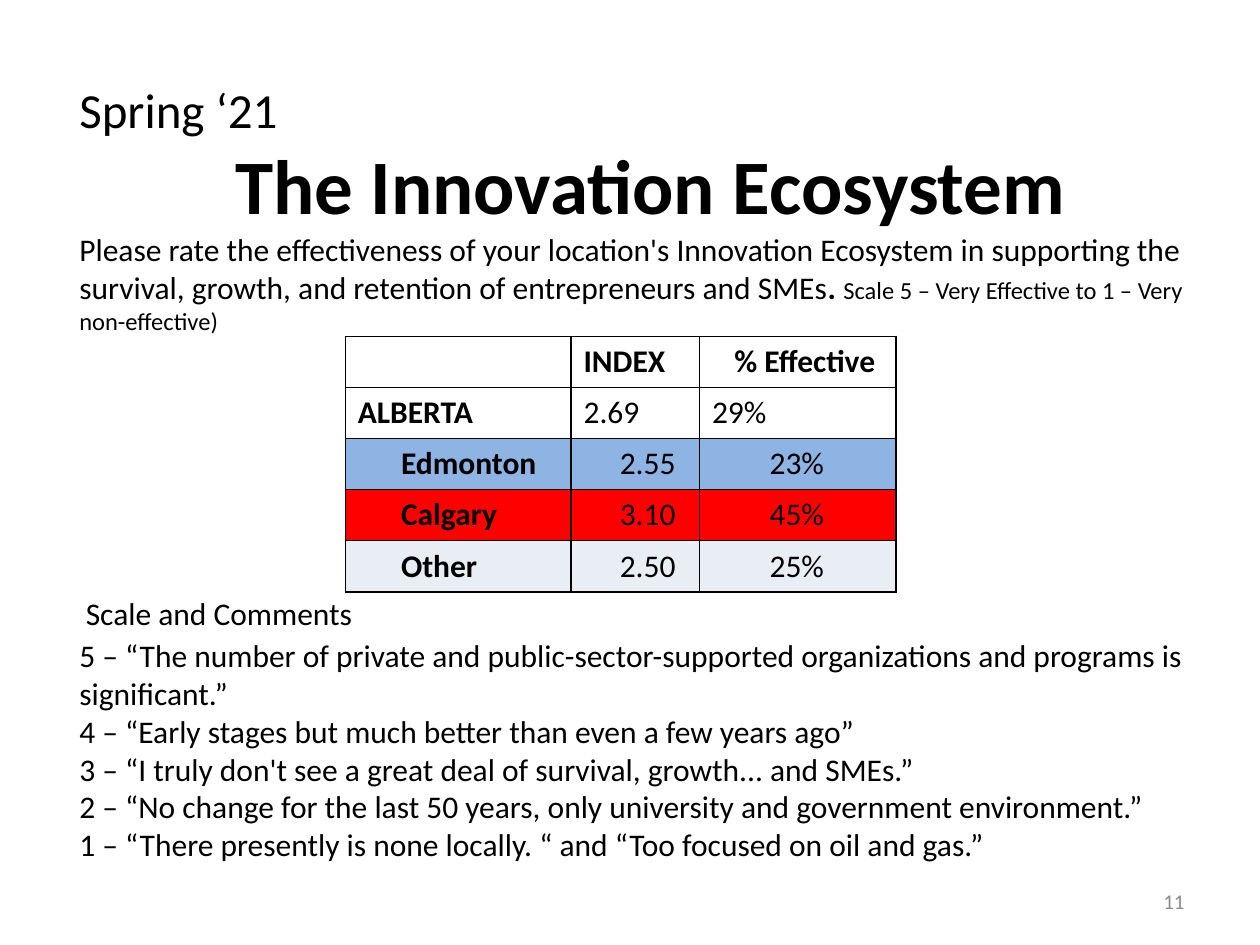
import lxml.etree
import pptx
import pptx.dml.color
import pptx.enum.text
import pptx.oxml.ns
import pptx.util

Cm = pptx.util.Cm
Pt = pptx.util.Pt
RGBColor = pptx.dml.color.RGBColor
ALIGN = pptx.enum.text.PP_ALIGN
ANCHOR = pptx.enum.text.MSO_ANCHOR

FONT = "Calibri"
BLACK = RGBColor(0x00, 0x00, 0x00)
GREY = RGBColor(0x8C, 0x8C, 0x8C)
BLUE = RGBColor(0x8E, 0xB4, 0xE3)
RED = RGBColor(0xFF, 0x00, 0x00)
PALE = RGBColor(0xE9, 0xED, 0xF4)

LEFT, WIDTH = 1.35, 23.06
COLUMN_WIDTHS = (4.55, 2.59, 3.96)
ROW_HEIGHT = 1.03
HEADER_INDENTS = (0, 0, 0.45)
CITY_INDENTS = (0.87, 0.73, 1.16)
NO_INDENTS = (0, 0, 0)

# Row texts, fill and left indents in centimetres
RATINGS = (
    (("", "INDEX", "% Effective"), None, HEADER_INDENTS),
    (("ALBERTA", "2.69", "29%"), None, NO_INDENTS),
    (("Edmonton", "2.55", "23%"), BLUE, CITY_INDENTS),
    (("Calgary", "3.10", "45%"), RED, CITY_INDENTS),
    (("Other", "2.50", "25%"), PALE, CITY_INDENTS),
)

COMMENTS = (
    "5 – “The number of private and public-sector-supported organizations and programs is significant.”",
    "4 – “Early stages but much better than even a few years ago”",
    "3 – “I truly don't see a great deal of survival, growth... and SMEs.”",
    "2 – “No change for the last 50 years, only university and government environment.”",
    "1 – “There presently is none locally. “ and “Too focused on oil and gas.”",
)


def add_text(paragraph, text, size=18, bold=False, color=BLACK, align=ALIGN.LEFT, indent=0):
    """Append a formatted run; alignment and indent (cm) apply to the paragraph."""
    paragraph.alignment = align
    if indent:
        paragraph._p.get_or_add_pPr().set("marL", str(Cm(indent)))
    run = paragraph.add_run()
    run.text = text
    run.font.name = FONT
    run.font.size = Pt(size)
    run.font.bold = bold
    run.font.color.rgb = color


def add_text_frame(slide, left, top, width, height, anchor=ANCHOR.TOP):
    shape = slide.shapes.add_textbox(Cm(left), Cm(top), Cm(width), Cm(height))
    text_frame = shape.text_frame
    text_frame.word_wrap = True
    text_frame.vertical_anchor = anchor
    return text_frame


def add_borders(cell):
    properties = cell._tc.get_or_add_tcPr()
    for side in ("lnL", "lnR", "lnT", "lnB"):
        line = lxml.etree.SubElement(properties, pptx.oxml.ns.qn("a:" + side), w=str(Pt(1)))
        fill = lxml.etree.SubElement(line, pptx.oxml.ns.qn("a:solidFill"))
        lxml.etree.SubElement(fill, pptx.oxml.ns.qn("a:srgbClr"), val=str(BLACK))


def add_heading(slide):
    text_frame = add_text_frame(slide, LEFT, 1.47, WIDTH, 7.52)
    add_text(text_frame.paragraphs[0], "Spring ‘21", size=28)
    add_text(text_frame.add_paragraph(), "The Innovation Ecosystem", size=44, bold=True, indent=3.14)
    question = text_frame.add_paragraph()
    add_text(question, "Please rate the effectiveness of your location's Innovation Ecosystem in "
                       "supporting the survival, growth, and retention of entrepreneurs and SMEs")
    add_text(question, ". ", bold=True)
    add_text(question, "Scale 5 – Very Effective to 1 – Very non-effective)", size=14)


def add_ratings_table(slide):
    table = slide.shapes.add_table(
        len(RATINGS), len(COLUMN_WIDTHS), Cm(6.96), Cm(6.78),
        Cm(sum(COLUMN_WIDTHS)), Cm(ROW_HEIGHT * len(RATINGS))).table
    table.first_row = table.horz_banding = False
    for column, width in zip(table.columns, COLUMN_WIDTHS):
        column.width = Cm(width)
    for row_index, (texts, fill, indents) in enumerate(RATINGS):
        table.rows[row_index].height = Cm(ROW_HEIGHT)
        for column_index, (text, indent) in enumerate(zip(texts, indents)):
            cell = table.cell(row_index, column_index)
            add_borders(cell)
            if fill is None:
                cell.fill.background()
            else:
                cell.fill.solid()
                cell.fill.fore_color.rgb = fill
            if text:
                bold = row_index == 0 or column_index == 0
                add_text(cell.text_frame.paragraphs[0], text, bold=bold, indent=indent)


def add_comments(slide):
    text_frame = add_text_frame(slide, LEFT, 12.7, WIDTH, 4.88)
    for index, comment in enumerate(COMMENTS):
        paragraph = text_frame.add_paragraph() if index else text_frame.paragraphs[0]
        add_text(paragraph, comment)
    caption = add_text_frame(slide, 1.48, 11.86, 6.78, 1.02)
    add_text(caption.paragraphs[0], "Scale and Comments")


def add_slide_number(slide):
    text_frame = add_text_frame(slide, 18.2, 17.65, 5.93, 1.02, anchor=ANCHOR.MIDDLE)
    add_text(text_frame.paragraphs[0], "11", size=12, color=GREY, align=ALIGN.RIGHT)


def main():
    presentation = pptx.Presentation()
    presentation.slide_width = Cm(25.4)
    presentation.slide_height = Cm(19.05)
    slide = presentation.slides.add_slide(presentation.slide_layouts[6])
    add_slide_number(slide)
    add_heading(slide)
    add_ratings_table(slide)
    add_comments(slide)
    presentation.save("out.pptx")


if __name__ == "__main__":
    main()
